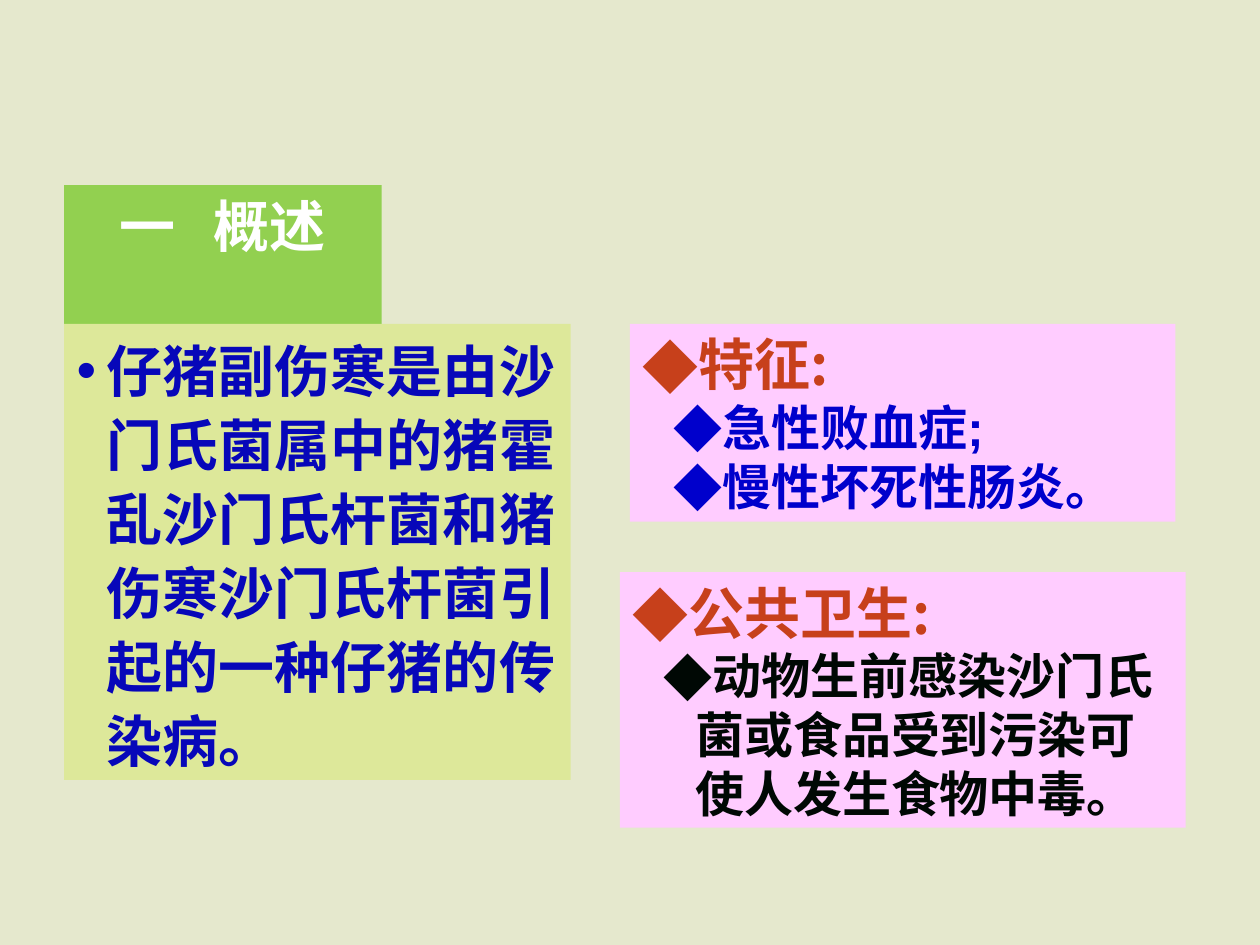
from dataclasses import dataclass

from lxml.etree import SubElement
from pptx import Presentation
from pptx.dml.color import RGBColor
from pptx.enum.shapes import MSO_SHAPE
from pptx.enum.text import MSO_ANCHOR, MSO_AUTO_SIZE, PP_ALIGN
from pptx.oxml.ns import qn
from pptx.shapes.autoshape import Shape
from pptx.util import Inches, Pt

COLORS = {
    "background": "E5E8CD",
    "green": "92D050",
    "lime": "DDE89A",
    "pink": "FFCCFF",
    "white": "FFFFFF",
    "navy": "0707B9",
    "rust": "C7401B",
    "blue": "0000CC",
    "black": "000804",
}
LATIN_FONT = "Arial"
CHINESE_FONT = "Noto Sans CJK SC"


@dataclass(frozen=True)
class Line:
    text: str
    color: str
    size: int = 32
    font: str = LATIN_FONT
    bullet: str = "◆"
    margin: float = 0
    indent: float = 0
    level: int = 0
    spacing: float = 1.0
    before: float = 0


@dataclass(frozen=True)
class Panel:
    left: float
    top: float
    width: float
    height: float
    fill: str
    lines: tuple[Line, ...]


def heading(text: str) -> Line:
    return Line(text, "rust", font=CHINESE_FONT)


def detail(text: str, color: str) -> Line:
    return Line(text, color, size=28, margin=0.5, indent=-0.25, level=1)


TITLE = Panel(0.51, 1.47, 2.52, 0.64, "green", (Line("一   概述", "white", bullet=""),))
PANELS = (
    Panel(0.51, 2.57, 4.02, 3.62, "lime", (
        Line("仔猪副伤寒是由沙门氏菌属中的猪霍乱沙门氏杆菌和猪伤寒沙门氏杆菌引起的一种仔猪的传染病。",
             "navy", bullet="•", margin=0.24, indent=-0.24, spacing=1.1, before=3.2),
    )),
    Panel(5, 2.57, 4.33, 1.57, "pink", (
        heading("特征:"),
        detail("急性败血症;", "blue"),
        detail("慢性坏死性肠炎。", "blue"),
    )),
    Panel(4.92, 4.54, 4.49, 2.03, "pink", (
        heading("公共卫生:"),
        detail("动物生前感染沙门氏菌或食品受到污染可使人发生食物中毒。", "black"),
    )),
)


def color(name: str) -> RGBColor:
    return RGBColor.from_string(COLORS[name])


def write_text(paragraph, text: str, *, size: int, font: str, fill: str,
               align=PP_ALIGN.LEFT, spacing: float = 1.0, before: float = 0) -> None:
    paragraph.alignment = align
    paragraph.line_spacing = spacing
    paragraph.space_before = Pt(before)
    run = paragraph.add_run()
    run.text = text
    run.font.size = Pt(size)
    run.font.name = font
    run.font.bold = True
    run.font.color.rgb = color(fill)
    SubElement(run.font._element, qn("a:ea"), typeface=CHINESE_FONT)


def set_bullet(paragraph, line: Line) -> None:
    properties = paragraph._p.get_or_add_pPr()
    properties.set("marL", str(Inches(line.margin)))
    properties.set("indent", str(Inches(line.indent)))
    if line.bullet:
        font = LATIN_FONT if line.bullet == "•" else CHINESE_FONT
        SubElement(properties, qn("a:buFont"), typeface=font)
        SubElement(properties, qn("a:buChar"), char=line.bullet)
    else:
        SubElement(properties, qn("a:buNone"))


def fill_panel(shape: Shape, panel: Panel, align=PP_ALIGN.LEFT) -> None:
    shape.left, shape.top = Inches(panel.left), Inches(panel.top)
    shape.width, shape.height = Inches(panel.width), Inches(panel.height)
    shape.fill.solid()
    shape.fill.fore_color.rgb = color(panel.fill)
    shape.line.fill.background()
    frame = shape.text_frame
    frame.word_wrap = True
    frame.auto_size = MSO_AUTO_SIZE.SHAPE_TO_FIT_TEXT
    frame.vertical_anchor = MSO_ANCHOR.TOP
    for index, line in enumerate(panel.lines):
        paragraph = frame.add_paragraph() if index else frame.paragraphs[0]
        paragraph.level = line.level
        write_text(paragraph, line.text, size=line.size, font=line.font, fill=line.color,
                   align=align, spacing=line.spacing, before=line.before)
        set_bullet(paragraph, line)


def main() -> None:
    presentation = Presentation()
    presentation.slide_width, presentation.slide_height = Inches(10), Inches(7.5)
    slide = presentation.slides.add_slide(presentation.slide_layouts[5])
    slide.background.fill.solid()
    slide.background.fill.fore_color.rgb = color("background")

    fill_panel(slide.shapes.title, TITLE, PP_ALIGN.CENTER)
    for panel in PANELS:
        shape = slide.shapes.add_shape(MSO_SHAPE.RECTANGLE, 0, 0, 0, 0)
        shape.shadow.inherit = False
        fill_panel(shape, panel)

    presentation.save("out.pptx")


if __name__ == "__main__":
    main()
